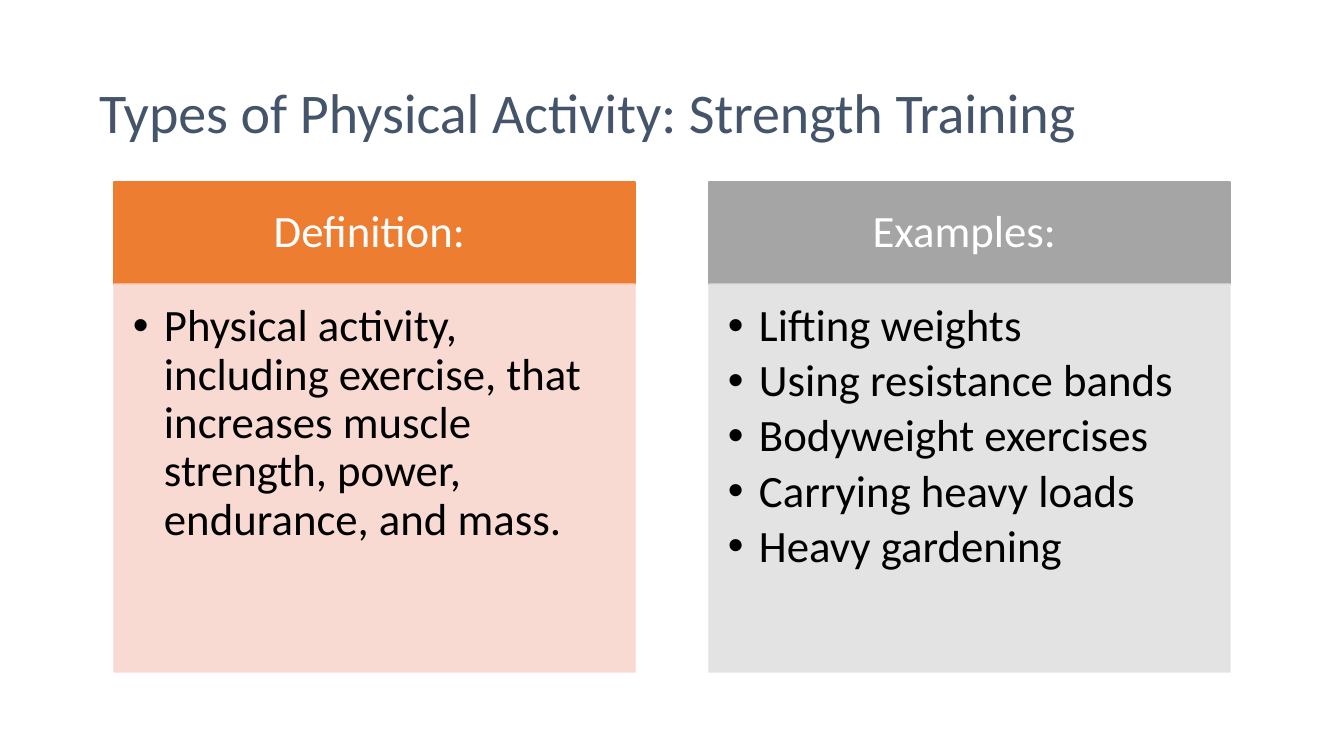
import pptx
import pptx.dml.color
import pptx.enum.shapes
import pptx.enum.text
import pptx.oxml.ns
import pptx.util
from lxml import etree

PX = 914400 / 100.8
ANCHOR = pptx.enum.text.MSO_ANCHOR
ALIGN = pptx.enum.text.PP_ALIGN
qn = pptx.oxml.ns.qn


def rgb(value):
    return pptx.dml.color.RGBColor.from_string(value)


def write(frame, lines, size, color, insets, **paragraph_format):
    """Fill a text frame with one paragraph per line; insets are left, top, right, bottom."""
    frame.word_wrap = True
    for side, inset in zip(("left", "top", "right", "bottom"), insets):
        setattr(frame, f"margin_{side}", round(inset * PX))
    for index, line in enumerate(lines):
        paragraph = frame.add_paragraph() if index else frame.paragraphs[0]
        paragraph.line_spacing = 0.9
        for key, value in paragraph_format.items():
            setattr(paragraph, key, value)
        run = paragraph.add_run()
        run.text = line
        run.font.name = "Calibri"
        run.font.size = pptx.util.Pt(size)
        run.font.color.rgb = rgb(color)


deck = pptx.Presentation()
deck.slide_width, deck.slide_height = round(1344 * PX), round(756 * PX)
slide = deck.slides.add_slide(deck.slide_layouts[6])

title = slide.shapes.add_textbox(*(round(n * PX) for n in (89, 50, 1166, 131)))
title.text_frame.vertical_anchor = ANCHOR.MIDDLE
write(title.text_frame, ["Types of Physical Activity: Strength Training"],
      40, "44546A", (10, 5, 10, 5))

COLUMN_LEFT, COLUMN_STEP, COLUMN_WIDTH = 114, 595, 521
HEADER_TOP, HEADER_HEIGHT, BODY_HEIGHT = 182, 102, 388
INDENT = round(31 * PX)

columns = [
    ("Definition: ", "ED7D31", "F8D7CE",
     ["Physical activity, including exercise, that increases muscle "
      "strength, power, endurance, and mass."]),
    ("Examples: ", "A5A5A5", "E1E1E1",
     ["Lifting weights", "Using resistance bands", "Bodyweight exercises",
      "Carrying heavy loads", "Heavy gardening"]),
]

for number, (heading, header_color, body_color, points) in enumerate(columns):
    left = COLUMN_LEFT + number * COLUMN_STEP
    panels = []
    for top, height, color in (
            (HEADER_TOP, HEADER_HEIGHT, header_color),
            (HEADER_TOP + HEADER_HEIGHT, BODY_HEIGHT, body_color)):
        panel = slide.shapes.add_shape(
            pptx.enum.shapes.MSO_SHAPE.RECTANGLE,
            *(round(n * PX) for n in (left, top, COLUMN_WIDTH, height)))
        panel.shadow.inherit = False
        panel.fill.solid()
        panel.fill.fore_color.rgb = rgb(color)
        panel.line.color.rgb = rgb(color)
        panel.line.width = pptx.util.Pt(1)
        panels.append(panel)
    header, body = panels

    header.text_frame.vertical_anchor = ANCHOR.MIDDLE
    write(header.text_frame, [heading], 32, "FFFFFF", (25, 14, 25, 14),
          alignment=ALIGN.CENTER)

    for tint in body._element.spPr.iter(qn("a:srgbClr")):
        etree.SubElement(tint, qn("a:alpha"), val="90000")
    body.text_frame.vertical_anchor = ANCHOR.TOP
    write(body.text_frame, points, 32, "000000", (19, 19, 25, 28),
          alignment=ALIGN.LEFT, level=1, space_after=pptx.util.Pt(4.8))
    for paragraph in body.text_frame.paragraphs:
        properties = paragraph._p.get_or_add_pPr()
        properties.set("marL", str(INDENT))
        properties.set("indent", str(-INDENT))
        etree.SubElement(properties, qn("a:buFont"), typeface="Arial")
        etree.SubElement(properties, qn("a:buChar"), char="•")

deck.save("out.pptx")
